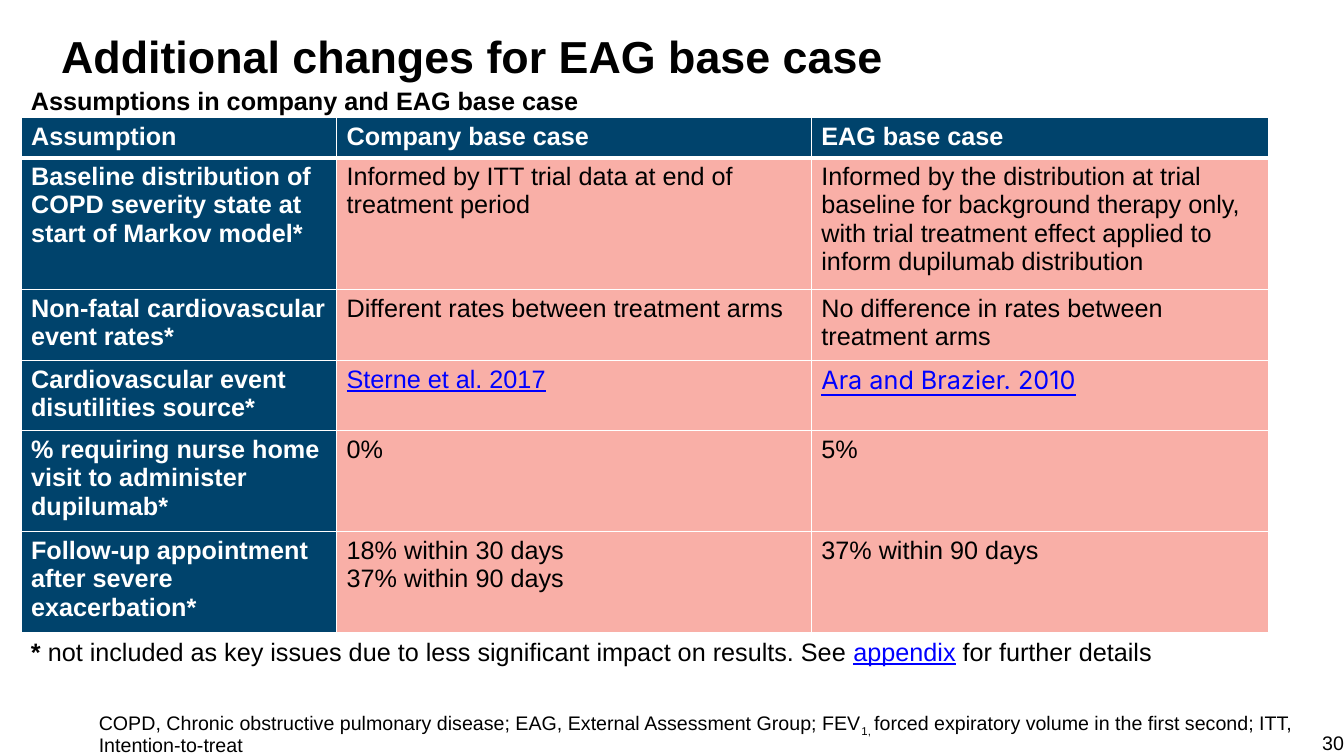
from dataclasses import dataclass

import pptx
import pptx.dml.color
import pptx.enum.text
import pptx.oxml
import pptx.oxml.ns
import pptx.util

Cm, Pt = pptx.util.Cm, pptx.util.Pt
Align = pptx.enum.text.PP_ALIGN


@dataclass(frozen=True)
class Theme:
    font: str = "Arial"
    alt_font: str = "Inter"
    title: int = 32
    body: int = 18
    small: int = 14
    ink: str = "000000"
    white: str = "FFFFFF"
    navy: str = "00436C"
    pink: str = "F9AFA7"
    link: str = "0000FF"


THEME = Theme()

HEADER = ["Assumption", "Company base case", "EAG base case"]
ASSUMPTIONS = [
    ["Baseline distribution of COPD severity state at start of Markov model*",
     "Informed by ITT trial data at end of treatment period",
     "Informed by the distribution at trial baseline for background therapy only, "
     "with trial treatment effect applied to inform dupilumab distribution"],
    ["Non-fatal cardiovascular event rates*",
     "Different rates between treatment arms",
     "No difference in rates between treatment arms"],
    ["Cardiovascular event disutilities source*",
     "Sterne et al. 2017", "Ara and Brazier. 2010"],
    ["% requiring nurse home visit to administer dupilumab*", "0%", "5%"],
    ["Follow-up appointment after severe exacerbation*",
     "18% within 30 days\n37% within 90 days", "37% within 90 days"],
]
# Cited sources and the typeface of each
SOURCES = {"Sterne et al. 2017": THEME.font, "Ara and Brazier. 2010": THEME.alt_font}
COL_WIDTHS = [7.95, 11.96, 11.53]
ROW_HEIGHTS = [0.99, 3.31, 1.79, 1.78, 2.53, 2.54]


def rgb(value):
    return pptx.dml.color.RGBColor.from_string(value)


def style(font, size, color=THEME.ink, bold=False, name=THEME.font):
    font.name, font.size, font.bold = name, Pt(size), bold
    font.color.rgb = rgb(color)


def mark_link(font):
    font.color.rgb = rgb(THEME.link)
    font.underline = True


def add_text(slide, box, size, parts, bold=False, wrap=True):
    """Place one paragraph in box; return it with its runs."""
    sp = slide.shapes.add_textbox(*map(Cm, box))
    tf = sp.text_frame
    tf.word_wrap = wrap
    p = tf.paragraphs[0]
    style(p.font, size, bold=bold)
    for part in parts:
        p.add_run().text = part
    return p, p.runs


def add_heading(slide, box):
    left, top, width, height = box
    p, _ = add_text(slide, (left + 0.76, top, width - 0.76, 1.65), THEME.title,
                    ["Additional changes for EAG base case"], bold=True)
    p.line_spacing = 0.9
    add_text(slide, (left, top + 1.29, 14.45, height - 1.29), THEME.body,
             ["Assumptions in company and EAG base case"], bold=True, wrap=False)


def set_borders(cell, widths):
    tcPr = cell._tc.get_or_add_tcPr()
    for side, width in widths.items():
        tcPr.append(pptx.oxml.parse_xml(
            f'<a:ln{side} {pptx.oxml.ns.nsdecls("a")} w="{Pt(width)}">'
            f'<a:solidFill><a:srgbClr val="{THEME.white}"/></a:solidFill></a:ln{side}>'))


def fill_cell(cell, text, row, col):
    is_head = row == 0 or col == 0
    set_borders(cell, {"L": 1, "R": 1, "T": 3 if row == 1 else 1, "B": 3 if row == 0 else 1})
    cell.fill.solid()
    cell.fill.fore_color.rgb = rgb(THEME.navy if is_head else THEME.pink)
    cell.text = text
    for p in cell.text_frame.paragraphs:
        style(p.font, THEME.body, THEME.white if is_head else THEME.ink, is_head,
              SOURCES.get(text, THEME.font))
        # Table styles colour the runs, so state colour and weight there too
        for r in p.runs:
            r.font.bold = is_head
            r.font.color.rgb = rgb(THEME.white if is_head else THEME.ink)
            if text in SOURCES:
                mark_link(r.font)


def add_assumptions(slide, box):
    rows = [HEADER] + ASSUMPTIONS
    table = slide.shapes.add_table(len(rows), len(HEADER), *map(Cm, box)).table
    for column, width in zip(table.columns, COL_WIDTHS):
        column.width = Cm(width)
    for i, (texts, height) in enumerate(zip(rows, ROW_HEIGHTS)):
        table.rows[i].height = Cm(height)
        for j, text in enumerate(texts):
            fill_cell(table.cell(i, j), text, i, j)


def add_note(slide, box):
    _, runs = add_text(slide, box, THEME.body, [
        "* ", "not included as key issues due to less significant impact on results. See ",
        "appendix", " for further details"], wrap=False)
    runs[0].font.bold = True
    mark_link(runs[2].font)


def add_footer(slide, box):
    left, top, width, height = box
    # Abbreviations
    p, runs = add_text(slide, (left, top, 30.61, height), THEME.small, [
        "COPD, Chronic obstructive pulmonary disease; EAG, External Assessment Group; FEV",
        "1, ", "forced expiratory volume in the first second; ITT, Intention-to-treat"])
    p.line_spacing = 0.9
    runs[1].font._element.set("baseline", "-25000")
    # Page number, flush with the right edge
    p, _ = add_text(slide, (left + width - 1.3, top + 0.48, 1.3, height - 0.48),
                    THEME.small, ["30"], wrap=False)
    p.alignment = Align.RIGHT
    slide.shapes[-1].text_frame.margin_right = 0
    slide.shapes[-1].text_frame.word_wrap = True


def main():
    prs = pptx.Presentation()
    prs.slide_width, prs.slide_height = Cm(33.86), Cm(19.05)
    slide = prs.slides.add_slide(prs.slide_layouts[6])
    add_heading(slide, (0.53, 0.74, 32.0, 2.31))
    add_assumptions(slide, (0.53, 2.96, sum(COL_WIDTHS), sum(ROW_HEIGHTS)))
    add_note(slide, (0.53, 15.9, 28.88, 1.02))
    add_footer(slide, (2.24, 17.81, 31.62, 1.24))
    prs.save("out.pptx")


if __name__ == "__main__":
    main()
